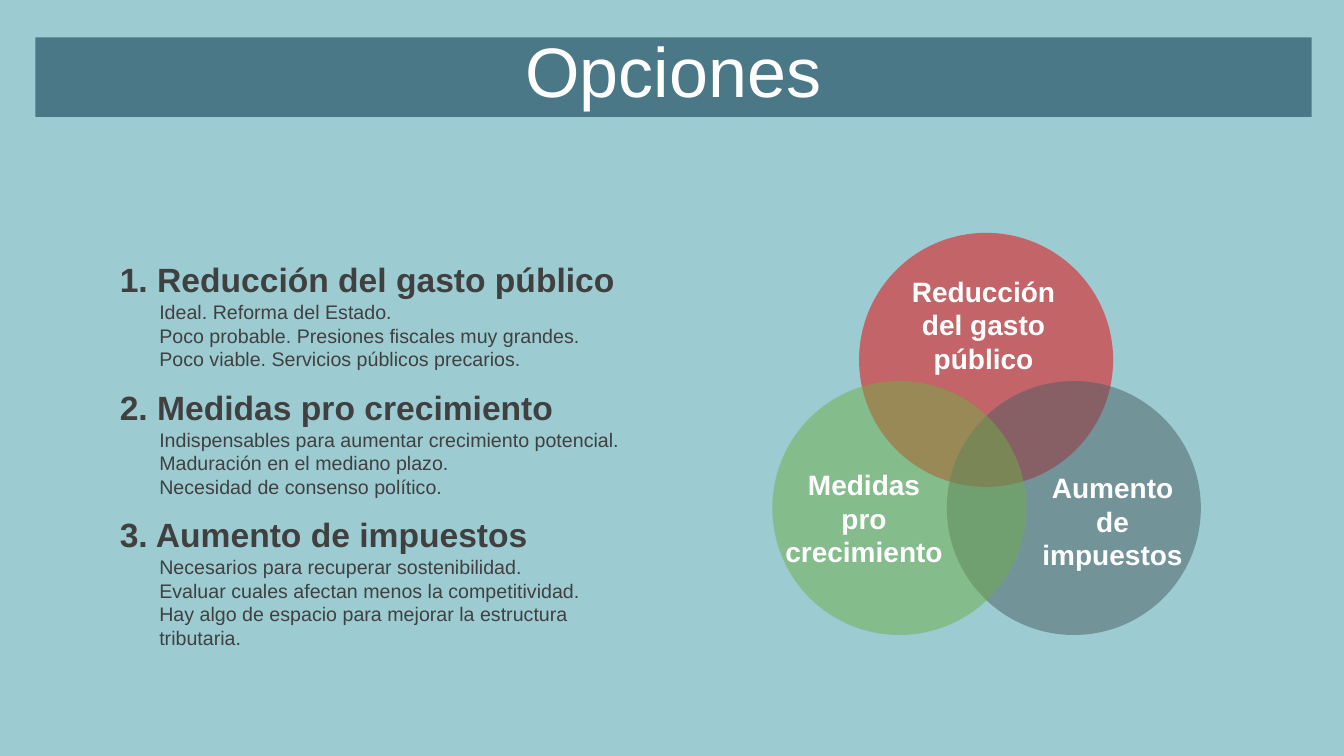
"""Build the "Opciones" slide: three policy options beside a Venn diagram."""
from lxml import etree
from pptx import Presentation
from pptx.dml.color import RGBColor
from pptx.enum.shapes import MSO_SHAPE
from pptx.enum.text import MSO_ANCHOR, MSO_AUTO_SIZE, PP_ALIGN
from pptx.oxml.ns import qn
from pptx.util import Inches, Pt

OVAL = MSO_SHAPE.OVAL
MIDDLE = MSO_ANCHOR.MIDDLE
NO_AUTOFIT = MSO_AUTO_SIZE.NONE
LEFT = PP_ALIGN.LEFT
CENTER = PP_ALIGN.CENTER
FONT = "Arial"
WHITE = "FFFFFF"
DARK_GRAY = "404040"
CIRCLE_SIZE = 2.52
OPTION_TOP = 2.52
OPTION_STEP = 1.265


def set_color(color_format, hex_color):
    color_format.rgb = RGBColor.from_string(hex_color)


def write_text(text_frame, lines, size, color, bold=False, alignment=LEFT):
    text_frame.word_wrap = True
    text_frame.auto_size = NO_AUTOFIT
    for index, line in enumerate(lines):
        paragraph = text_frame.add_paragraph() if index else text_frame.paragraphs[0]
        paragraph.alignment = alignment
        run = paragraph.add_run()
        run.text = line
        run.font.name = FONT
        run.font.size = Pt(size)
        run.font.bold = bold
        set_color(run.font.color, color)


presentation = Presentation()
presentation.slide_width = Inches(13.33)
presentation.slide_height = Inches(7.5)
slide = presentation.slides.add_slide(presentation.slide_layouts[5])
slide.background.fill.solid()
set_color(slide.background.fill.fore_color, "9CCCD2")

title = slide.shapes.title
title.left, title.top = Inches(0.35), Inches(0.37)
title.width, title.height = Inches(12.66), Inches(0.79)
title.fill.solid()
set_color(title.fill.fore_color, "4A7886")
title.text_frame.vertical_anchor = MIDDLE
write_text(title.text_frame, ["Opciones"], 50, WHITE, alignment=CENTER)
title.text_frame.paragraphs[0].line_spacing = 0.8
title.text_frame.paragraphs[0].space_before = Pt(10)

circles = [
    (8.52, 2.31, "EA0000"),
    (9.39, 3.78, "4A5D62"),
    (7.66, 3.78, "70AD47"),
]
for left, top, color in circles:
    circle = slide.shapes.add_shape(
        OVAL, Inches(left), Inches(top), Inches(CIRCLE_SIZE), Inches(CIRCLE_SIZE)
    )
    circle.shadow.inherit = False
    circle.line.fill.background()
    circle.fill.solid()
    set_color(circle.fill.fore_color, color)
    color_element = circle.fill._xPr.find(qn("a:solidFill"))[0]
    etree.SubElement(color_element, qn("a:alpha"), val="50000")

circle_labels = [
    (7.67, 4.59, 1.8, "Medidas pro crecimiento"),
    (10.17, 4.62, 1.73, "Aumento de impuestos"),
    (8.89, 2.67, 1.73, "Reducción del gasto público"),
]
for left, top, width, text in circle_labels:
    label = slide.shapes.add_textbox(
        Inches(left), Inches(top), Inches(width), Inches(1.11)
    )
    write_text(label.text_frame, [text], 20, WHITE, bold=True, alignment=CENTER)

options = [
    ("1. Reducción del gasto público", [
        "Ideal. Reforma del Estado.",
        "Poco probable. Presiones fiscales muy grandes.",
        "Poco viable. Servicios públicos precarios.",
    ]),
    ("2. Medidas pro crecimiento", [
        "Indispensables para aumentar crecimiento potencial.",
        "Maduración en el mediano plazo.",
        "Necesidad de consenso político.",
    ]),
    ("3. Aumento de impuestos", [
        "Necesarios para recuperar sostenibilidad.",
        "Evaluar cuales afectan menos la competitividad.",
        "Hay algo de espacio para mejorar la estructura tributaria.",
    ]),
]
for index, (heading_text, details) in enumerate(options):
    top = OPTION_TOP + index * OPTION_STEP
    detail_box = slide.shapes.add_textbox(
        Inches(1.5), Inches(top + 0.41), Inches(4.88), Inches(0.81)
    )
    detail_box.text_frame.margin_left = Inches(0.08)
    detail_box.text_frame.margin_right = Inches(0.08)
    write_text(detail_box.text_frame, details, 14, DARK_GRAY)
    heading = slide.shapes.add_textbox(
        Inches(1.09), Inches(top), Inches(5.29), Inches(0.5)
    )
    write_text(heading.text_frame, [heading_text], 24, DARK_GRAY, bold=True)

presentation.save("out.pptx")
